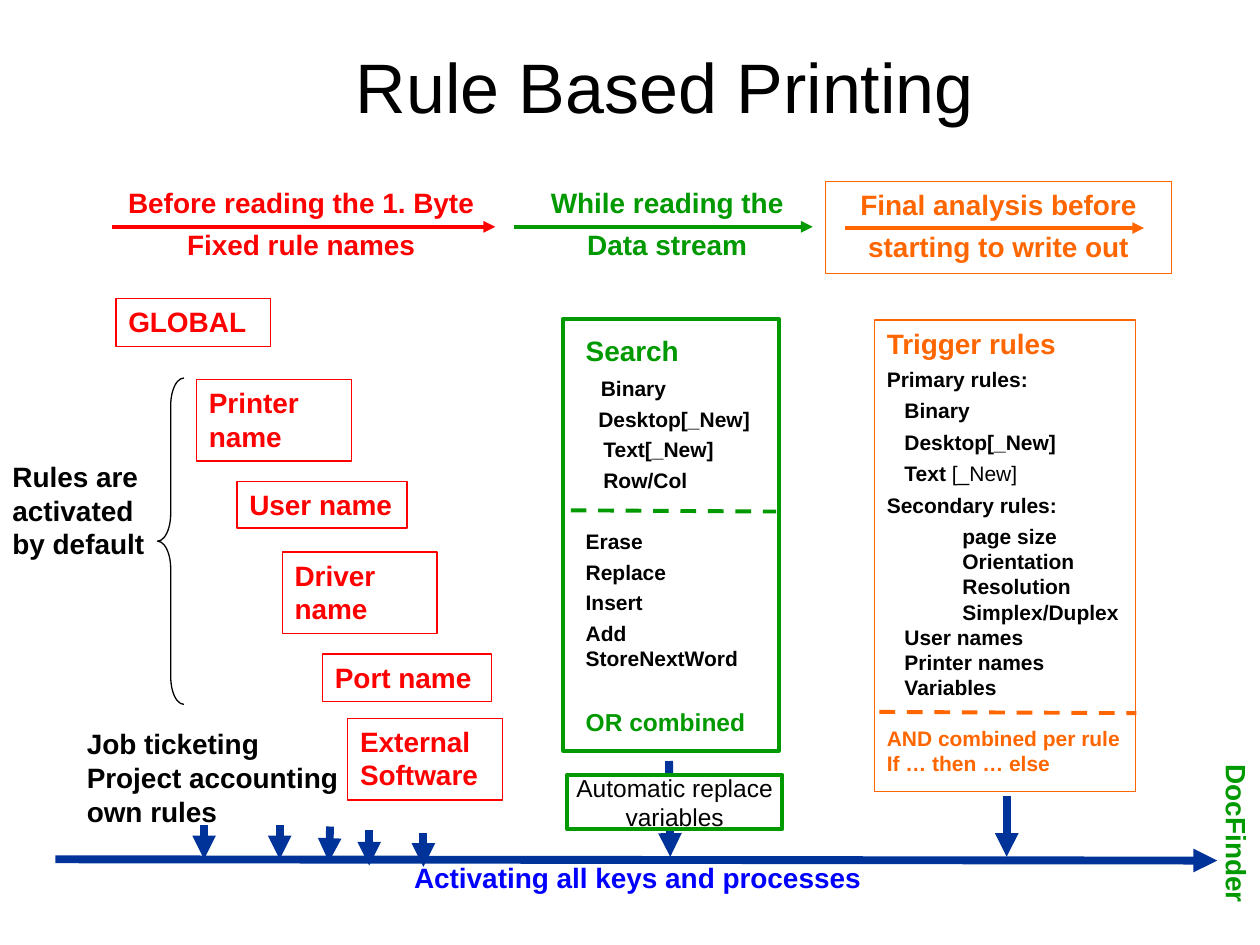
from dataclasses import dataclass
from typing import Optional

import lxml.etree
import pptx
import pptx.dml.color
import pptx.enum.dml
import pptx.enum.shapes
import pptx.enum.text
import pptx.oxml.ns
import pptx.util

Inches = pptx.util.Inches
Pt = pptx.util.Pt
ALIGN = pptx.enum.text.PP_ALIGN
ANCHOR = pptx.enum.text.MSO_ANCHOR
SHAPE = pptx.enum.shapes.MSO_SHAPE

FONT = "Arial"
COLORS = {
    "black": "000000", "white": "FFFFFF", "red": "FF0000", "green": "009900",
    "orange": "FF6600", "navy": "003399", "blue": "0000FF",
}
Area = tuple[float, float, float, float]
Point = tuple[float, float]


@dataclass
class Para:
    text: str
    size: float = 16
    color: str = "black"
    before: float = 0
    indent: float = 0
    bold: bool = True
    plain_tail: str = ""  # unbold text that follows on the same line


@dataclass
class Phase:
    lines: tuple[str, str]
    color: str
    area: Area
    arrow: tuple[float, float, float]  # start x, end x, y
    border: Optional[str] = None


@dataclass
class RuleBox:
    text: str
    area: Area


def rgb(name: str) -> pptx.dml.color.RGBColor:
    return pptx.dml.color.RGBColor.from_string(COLORS[name])


def add_span(para, text: str, item: Para, bold: bool) -> None:
    span = para.add_run()
    span.text = text
    span.font.name = FONT
    span.font.size = Pt(item.size)
    span.font.bold = bold
    span.font.color.rgb = rgb(item.color)


def write_text(shape, items: list[Para], *, align=ALIGN.LEFT, anchor=ANCHOR.TOP,
               wrap: bool = True) -> None:
    frame = shape.text_frame
    frame.word_wrap = wrap
    frame.vertical_anchor = anchor
    for index, item in enumerate(items):
        para = frame.add_paragraph() if index else frame.paragraphs[0]
        para.alignment = align
        para.space_before = Pt(item.before)
        if item.indent:
            para._p.get_or_add_pPr().set("marL", str(Inches(item.indent)))
        for number, line in enumerate(item.text.split("\n")):
            if number:
                para.add_line_break()
            add_span(para, line, item, item.bold)
        if item.plain_tail:
            add_span(para, item.plain_tail, item, False)


def add_text(page, area: Area, items: list[Para], **text_format):
    box = page.shapes.add_textbox(*map(Inches, area))
    write_text(box, items, **text_format)
    return box


def add_outline(page, area: Area, color: str, *, width: float = 0.75,
                fill: Optional[str] = None, kind=SHAPE.RECTANGLE):
    shape = page.shapes.add_shape(kind, *map(Inches, area))
    shape.shadow.inherit = False
    shape.line.color.rgb = rgb(color)
    shape.line.width = Pt(width)
    if fill:
        shape.fill.solid()
        shape.fill.fore_color.rgb = rgb(fill)
    else:
        shape.fill.background()
    return shape


def add_line(page, start: Point, end: Point, color: str, *, width: float = 2.25,
             arrow: bool = True) -> None:
    """Draw an arrow, or a dashed divider when arrow is False."""
    line = page.shapes.add_connector(pptx.enum.shapes.MSO_CONNECTOR.STRAIGHT,
                                     *map(Inches, start + end))
    line.line.color.rgb = rgb(color)
    line.line.width = Pt(width)
    qn = pptx.oxml.ns.qn
    if arrow:
        lxml.etree.SubElement(line.line._get_or_add_ln(), qn("a:tailEnd"), type="triangle")
    else:
        line.line.dash_style = pptx.enum.dml.MSO_LINE.DASH
    lxml.etree.SubElement(line._element.spPr, qn("a:effectLst"))


PHASES = [
    Phase(("Before reading the 1. Byte", "Fixed rule names"), "red",
          (0.73, 1.42, 3.32, 0.72), (0.89, 3.93, 1.8)),
    Phase(("While reading the", "Data stream"), "green",
          (3.92, 1.42, 2.75, 0.72), (4.08, 6.45, 1.8)),
    Phase(("Final analysis before", "starting to write out"), "orange",
          (6.55, 1.44, 2.75, 0.73), (6.71, 9.08, 1.81), "orange"),
]

RULE_BOXES = [
    RuleBox("GLOBAL", (0.92, 2.37, 1.23, 0.38)),
    RuleBox("Printer name", (1.56, 3.01, 1.23, 0.65)),
    RuleBox("User name", (1.88, 3.82, 1.35, 0.37)),
    RuleBox("Driver name", (2.24, 4.38, 1.23, 0.65)),
    RuleBox("Port name", (2.56, 5.19, 1.34, 0.38)),
    RuleBox("External\nSoftware", (2.76, 5.7, 1.23, 0.65)),
]

SEARCH_ITEMS = [
    Para("Search", color="green"),
    Para("Binary", 12, before=4.8, indent=0.12),
    Para("Desktop[_New]", 12, before=3, indent=0.1),
    Para("Text[_New]", 12, before=3, indent=0.14),
    Para("Row/Col", 12, before=3, indent=0.14),
    Para("Erase", 12, before=20.8),
    *[Para(text, 12, before=3) for text in ("Replace", "Insert", "Add\nStoreNextWord")],
    Para("OR combined", 14, "green", before=20.9),
]

TRIGGER_ITEMS = [
    Para("Trigger rules", color="orange"),
    Para("Primary rules:", 12, before=3.6),
    Para("Binary", 12, before=3.6, indent=0.14),
    Para("Desktop[_New]", 12, before=3.6, indent=0.14),
    Para("Text", 12, before=3.6, indent=0.14, plain_tail=" [_New]"),
    Para("Secondary rules:", 12, before=3.6),
    Para("page size", 12, before=3.6, indent=0.6),
    *[Para(text, 12, indent=0.6) for text in ("Orientation", "Resolution", "Simplex/Duplex")],
    *[Para(text, 12, indent=0.14) for text in ("User names", "Printer names", "Variables")],
    Para("AND combined per rule", 12, "orange", before=14.4),
    Para("If … then … else", 12, "orange"),
]

KEY_ARROWS = [
    ((1.62, 6.55), (1.62, 6.82)), ((2.22, 6.55), (2.22, 6.82)),
    ((2.62, 6.56), (2.61, 6.84)), ((2.93, 6.59), (2.93, 6.87)),
    ((3.36, 6.61), (3.36, 6.88)), ((5.31, 6.04), (5.32, 6.8)),
    ((7.99, 6.32), (7.99, 6.8)), ((0.44, 6.82), (9.66, 6.83)),
]


def main() -> None:
    deck = pptx.Presentation()
    deck.slide_width, deck.slide_height = Inches(10), Inches(7.5)
    page = deck.slides.add_slide(deck.slide_layouts[6])

    # Title and caption of the process line
    add_text(page, (2.14, 0.3, 6.27, 1.53),
             [Para("Rule Based Printing", 40, bold=False)], align=ALIGN.CENTER)
    add_text(page, (0.49, 6.78, 9.14, 0.37),
             [Para("Activating all keys and processes", color="blue")], align=ALIGN.CENTER)

    # Phase headings, each with an arrow between its two lines
    for phase in PHASES:
        first, second = phase.lines
        if phase.border:
            add_outline(page, phase.area, phase.border)
        add_text(page, phase.area,
                 [Para(first, color=phase.color), Para(second, color=phase.color, before=4.8)],
                 align=ALIGN.CENTER)
        left, right, y = phase.arrow
        add_line(page, (left, y), (right, y), phase.color)

    # Search and trigger columns with dashed dividers
    add_outline(page, (4.47, 2.53, 1.71, 3.43), "green", width=2.25, fill="white")
    add_text(page, (4.55, 2.6, 1.61, 3.38), SEARCH_ITEMS)
    add_line(page, (4.53, 4.05), (6.16, 4.06), "green", arrow=False)
    write_text(add_outline(page, (6.94, 2.54, 2.07, 3.74), "orange"), TRIGGER_ITEMS)
    add_line(page, (6.98, 5.65), (9.02, 5.66), "orange", arrow=False)

    # Process line and the arrows that lead to it
    for start, end in KEY_ARROWS:
        add_line(page, start, end, "navy", width=4.5)

    # Fixed rule names
    for rule in RULE_BOXES:
        write_text(add_outline(page, rule.area, "red"), [Para(rule.text, color="red")])

    # Brace and side remarks
    brace = add_outline(page, (1.25, 3, 0.21, 2.59), "black", kind=SHAPE.LEFT_BRACE)
    brace.adjustments[0], brace.adjustments[1] = 1.04, 0.5
    add_text(page, (0, 3.6, 1.45, 0.9), [Para("Rules are\nactivated by default")])
    add_text(page, (0.59, 5.72, 2.31, 0.9),
             [Para("Job ticketing\nProject accounting\nown rules")])

    # Automatic replacement and the vertical label
    replace_box = add_outline(page, (4.5, 6.15, 1.71, 0.43), "green", width=2.25, fill="white")
    write_text(replace_box, [Para("Automatic replace\nvariables", 14, bold=False)],
               align=ALIGN.CENTER, anchor=ANCHOR.MIDDLE, wrap=False)
    label = add_text(page, (8.44, 6.43, 2.75, 0.37), [Para("DocFinder", color="green")],
                     align=ALIGN.CENTER)
    label.rotation = 90

    deck.save("out.pptx")


if __name__ == "__main__":
    main()
